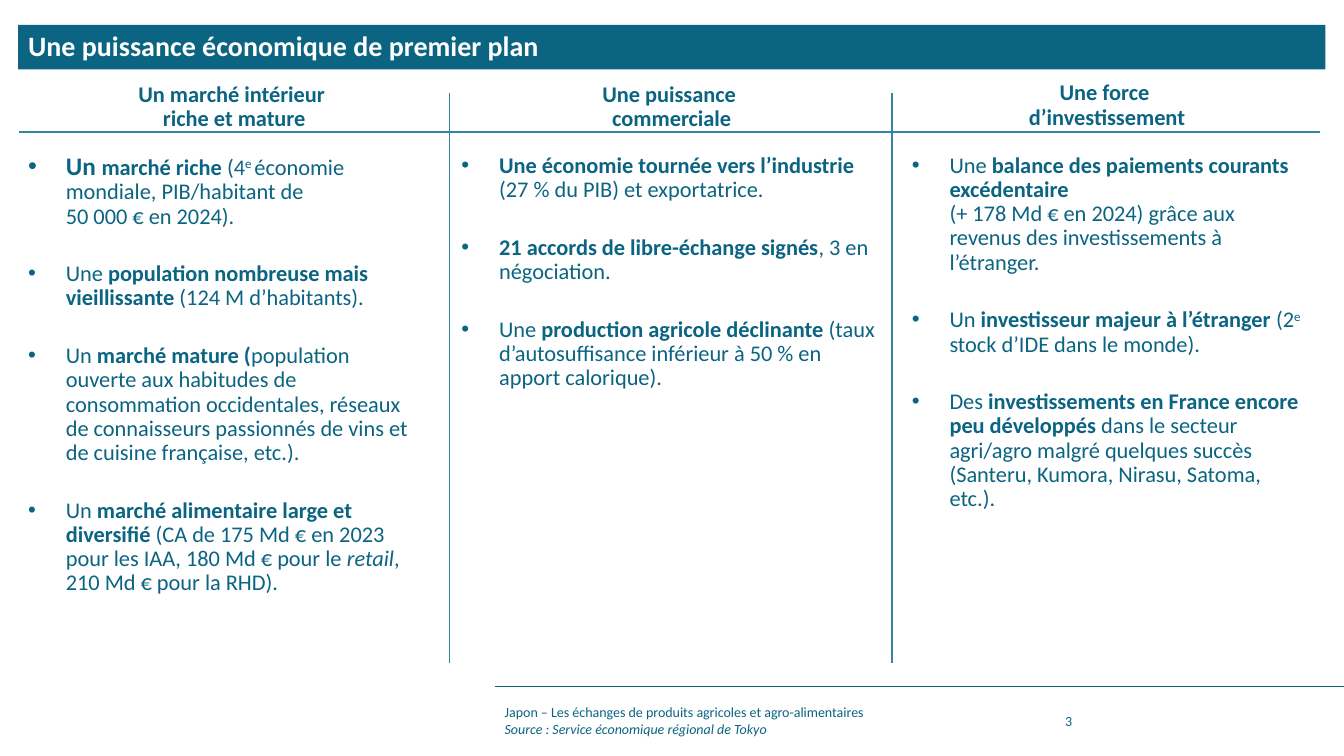
from lxml.etree import SubElement
from pptx import Presentation
from pptx.dml.color import RGBColor
from pptx.enum.shapes import MSO_CONNECTOR as Connector, MSO_SHAPE as Shape
from pptx.enum.text import MSO_ANCHOR as Anchor, PP_ALIGN as Align
from pptx.oxml.ns import qn
from pptx.util import Cm, Pt

BOLD, ITALIC, SUPER, LEAD = "bold", "italic", "super", "lead"


def color(value):
    return RGBColor.from_string(value)


class SlideBuilder:
    """Holds the style and the current slide."""
    font = "Calibri"
    main, rule_color, white = "0B6482", "31859C", "FFFFFF"

    def __init__(self, slide):
        self.slide = slide

    def add_run(self, paragraph, text, size, styles=(), ink=main):
        for index, piece in enumerate(text.split("\n")):
            if index:
                paragraph.add_line_break()
            if not piece:
                continue
            run = paragraph.add_run()
            run.text = piece
            run.font.name = self.font
            run.font.size = Pt(18 if LEAD in styles else size)
            run.font.bold = BOLD in styles or LEAD in styles
            run.font.italic = ITALIC in styles
            run.font.color.rgb = color(ink)
            if SUPER in styles:
                run.font._element.set("baseline", "30000")

    def text_box(self, left, top, width, height, anchor=Anchor.TOP):
        box = self.slide.shapes.add_textbox(Cm(left), Cm(top), Cm(width), Cm(height))
        frame = box.text_frame
        frame.word_wrap = True
        frame.vertical_anchor = anchor
        return frame

    def banner(self, left, top, width, height, text):
        shape = self.slide.shapes.add_shape(
            Shape.RECTANGLE, Cm(left), Cm(top), Cm(width), Cm(height))
        shape.shadow.inherit = False
        shape.fill.solid()
        shape.fill.fore_color.rgb = color(self.main)
        shape.line.fill.background()
        shape.text_frame.vertical_anchor = Anchor.MIDDLE
        paragraph = shape.text_frame.paragraphs[0]
        paragraph.alignment = Align.LEFT
        paragraph.line_spacing = 0.9
        self.add_run(paragraph, text, 20, [BOLD], self.white)

    def heading(self, left, top, width, text):
        paragraph = self.text_box(left, top, width, 1.37).paragraphs[0]
        paragraph.alignment = Align.CENTER
        paragraph.line_spacing = 0.9
        self.add_run(paragraph, text, 16, [BOLD])

    def bullets(self, left, top, width, height, items):
        frame = self.text_box(left, top, width, height)
        for index, runs in enumerate(items):
            paragraph = frame.add_paragraph() if index else frame.paragraphs[0]
            paragraph.line_spacing = 0.9
            paragraph.space_before = Pt(12 if index else 0)
            paragraph.space_after = Pt(12)
            properties = paragraph._p.get_or_add_pPr()
            properties.set("marL", str(Cm(0.95)))
            properties.set("indent", str(-Cm(0.95)))
            SubElement(properties, qn("a:buFont"), typeface="Arial")
            SubElement(properties, qn("a:buChar"), char="•")
            for text, *styles in runs:
                self.add_run(paragraph, text, 16, styles)

    def footer(self, left, width, lines):
        frame = self.text_box(left, 17.65, width, 1.02, Anchor.MIDDLE)
        for index, (text, *styles) in enumerate(lines):
            paragraph = frame.add_paragraph() if index else frame.paragraphs[0]
            self.add_run(paragraph, text, 10, styles)

    def rule(self, x1, y1, x2, y2, ink=rule_color, width=1):
        line = self.slide.shapes.add_connector(
            Connector.STRAIGHT, Cm(x1), Cm(y1), Cm(x2), Cm(y2))
        line.line.color.rgb = color(ink)
        line.line.width = Pt(width)
        SubElement(line._element.spPr, qn("a:effectLst"))


MARKET = [
    [("Un ", LEAD), ("marché riche ", BOLD), ("(4",), ("e ", SUPER),
     ("économie mondiale, PIB/habitant de \n50 000 € en 2024).",)],
    [("Une ",), ("population nombreuse mais vieillissante ", BOLD),
     ("(124 M d’habitants).",)],
    [("Un ",), ("marché mature (", BOLD),
     ("population ouverte aux habitudes de consommation occidentales, réseaux "
      "de connaisseurs passionnés de vins et de cuisine française, etc.).",)],
    [("Un ",), ("marché alimentaire large et diversifié ", BOLD),
     ("(CA de 175 Md € en 2023 pour les IAA, 180 Md € pour le ",),
     ("retail", ITALIC), (", 210 Md € pour la RHD).",)],
]
TRADE = [
    [("Une économie tournée vers l’industrie ", BOLD),
     ("(27 % du PIB) et exportatrice.",)],
    [("21 accords de libre-échange signés", BOLD), (", 3 en négociation.",)],
    [("Une ",), ("production agricole déclinante ", BOLD),
     ("(taux d’autosuffisance inférieur à 50 % en apport calorique).",)],
]
INVESTMENT = [
    [("Une ",), ("balance des paiements courants excédentaire \n", BOLD),
     ("(+ 178 Md € en 2024) grâce aux revenus des investissements à l’étranger.",)],
    [("Un ",), ("investisseur majeur à l’étranger ", BOLD), ("(2",), ("e", SUPER),
     (" stock d’IDE dans le monde).",)],
    [("Des ",), ("investissements en France encore peu développés ", BOLD),
     ("dans le secteur agri/agro malgré quelques succès "
      "(Santeru, Kumora, Nirasu, Satoma, etc.).",)],
]


def main():
    presentation = Presentation()
    presentation.slide_width, presentation.slide_height = Cm(33.87), Cm(19.05)
    builder = SlideBuilder(presentation.slides.add_slide(presentation.slide_layouts[6]))

    # Title
    builder.banner(0.46, 0.63, 32.94, 1.12, "Une puissance économique de premier plan")

    # Column headings
    builder.heading(0.48, 1.96, 10.85, "Un marché intérieur \nriche et mature")
    builder.heading(11.38, 1.96, 11.1, "Une puissance \ncommerciale")
    builder.heading(22.53, 1.93, 10.74, "Une force \nd’investissement")

    # Column contents
    builder.bullets(0.46, 3.74, 10.34, 12.98, MARKET)
    builder.bullets(11.38, 3.76, 11.1, 12.24, TRADE)
    builder.bullets(22.73, 3.76, 10.54, 13.51, INVESTMENT)

    # Rules between the columns and under the headings
    for x in (11.33, 22.48):
        builder.rule(x, 2.34, x, 16.71)
    builder.rule(0.48, 3.33, 33.27, 3.33)

    # Footer
    builder.rule(12.47, 17.3, 33.87, 17.3, builder.main, 0.5)
    builder.footer(12.47, 13.79, [
        ("Japon – Les échanges de produits agricoles et agro-alimentaires",),
        ("Source : Service économique régional de Tokyo", ITALIC)])
    builder.footer(26.59, 2.51, [("3",)])

    presentation.save("out.pptx")


if __name__ == "__main__":
    main()
